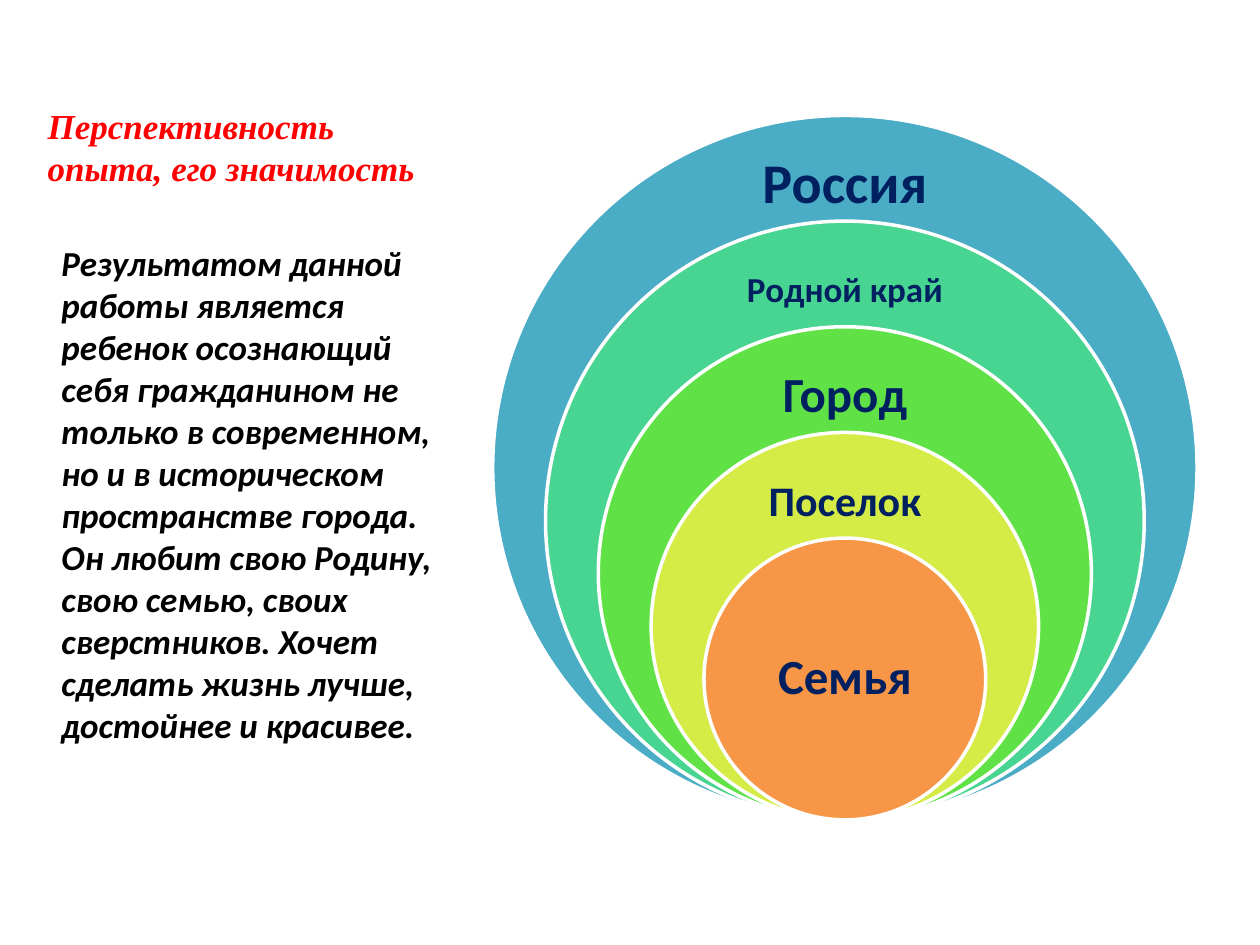
"""Build a slide with a statement beside five nested circles, from family to country."""

from dataclasses import dataclass

from pptx import Presentation
from pptx.dml.color import RGBColor
from pptx.enum.shapes import MSO_SHAPE
from pptx.enum.text import MSO_ANCHOR, PP_ALIGN
from pptx.slide import Slide
from pptx.text.text import TextFrame, _Paragraph
from pptx.util import Pt

COLORS = {
    "title": "FF0000",
    "body": "000000",
    "label": "002060",
    "outline": "FFFFFF",
    "country": "4BACC6",
    "region": "48D491",
    "city": "60E146",
    "settlement": "D5EC46",
    "family": "F79646",
}
TITLE = "Перспективность опыта, его значимость"
BODY = (
    "Результатом данной работы является ребенок осознающий себя гражданином "
    "не только в современном, но и в историческом пространстве города. "
    "Он любит свою Родину, свою семью, своих сверстников. "
    "Хочет сделать жизнь лучше, достойнее и красивее."
)
CENTER_X = 482.8
CIRCLES_BOTTOM = 468.5
OUTER_DIAMETER = 402.5
DIAMETER_STEP = 0.15 * OUTER_DIAMETER
LABEL_DROP = 0.05 * OUTER_DIAMETER


@dataclass(frozen=True)
class Circle:
    """One level of belonging, with its label."""

    text: str
    color: str
    size: float
    label_width: float
    label_height: float = 40


CIRCLES = [
    Circle("Россия", "country", 32, 151),
    Circle("Родной край", "region", 20, 148),
    Circle("Город", "city", 28, 146),
    Circle("Поселок", "settlement", 24, 120),
    Circle("Семья", "family", 28, 114, 80.5),
]


def rgb(name: str) -> RGBColor:
    """Return a named colour."""
    return RGBColor.from_string(COLORS[name])


def add_run(paragraph: _Paragraph, text: str, font: str, size: float,
            color: str, italic: bool = False) -> None:
    """Add a bold run to a paragraph."""
    run = paragraph.add_run()
    run.text = text
    run.font.name = font
    run.font.size = Pt(size)
    run.font.bold = True
    run.font.italic = italic
    run.font.color.rgb = rgb(color)


def set_margins(frame: TextFrame, side: float, top: float, bottom: float) -> None:
    """Wrap a text frame and set its margins."""
    frame.word_wrap = True
    frame.margin_left = frame.margin_right = Pt(side)
    frame.margin_top, frame.margin_bottom = Pt(top), Pt(bottom)


def add_title(slide: Slide) -> None:
    """Place and format the title placeholder."""
    title = slide.shapes.title
    title.left, title.top = Pt(20), Pt(43)
    title.width, title.height = Pt(237), Pt(91.5)
    frame = title.text_frame
    set_margins(frame, 7.2, 3.6, 27)
    frame.vertical_anchor = MSO_ANCHOR.BOTTOM
    paragraph = frame.paragraphs[0]
    paragraph.alignment = PP_ALIGN.LEFT
    add_run(paragraph, TITLE, "Times New Roman", 20, "title", italic=True)


def add_body(slide: Slide) -> None:
    """Add the statement below the title."""
    frame = slide.shapes.add_textbox(Pt(28), Pt(134.5), Pt(237), Pt(369.5)).text_frame
    set_margins(frame, 7.2, 3.6, 3.6)
    add_run(frame.paragraphs[0], BODY, "Calibri", 20, "body", italic=True)


def add_circle(slide: Slide, circle: Circle, level: int) -> None:
    """Add a circle resting on the common bottom, and its label."""
    diameter = OUTER_DIAMETER - level * DIAMETER_STEP
    top = CIRCLES_BOTTOM - diameter
    shape = slide.shapes.add_shape(
        MSO_SHAPE.OVAL, Pt(CENTER_X - diameter / 2), Pt(top), Pt(diameter), Pt(diameter)
    )
    shape.shadow.inherit = False
    shape.fill.solid()
    shape.fill.fore_color.rgb = rgb(circle.color)
    shape.line.color.rgb = rgb("outline")
    shape.line.width = Pt(2)

    innermost = level == len(CIRCLES) - 1
    drop = (diameter - circle.label_height) / 2 if innermost else LABEL_DROP
    label = slide.shapes.add_textbox(
        Pt(CENTER_X - circle.label_width / 2), Pt(top + drop),
        Pt(circle.label_width), Pt(circle.label_height),
    )
    frame = label.text_frame
    set_margins(frame, 7.2, 0, 0)
    frame.vertical_anchor = MSO_ANCHOR.MIDDLE
    paragraph = frame.paragraphs[0]
    paragraph.alignment = PP_ALIGN.CENTER
    paragraph.line_spacing = 0.9
    add_run(paragraph, circle.text, "Calibri", circle.size, "label")


def main() -> None:
    """Create and save the presentation."""
    presentation = Presentation()
    presentation.slide_width, presentation.slide_height = Pt(720), Pt(540)
    slide = presentation.slides.add_slide(presentation.slide_layouts[5])
    add_title(slide)
    add_body(slide)
    for level, circle in enumerate(CIRCLES):
        add_circle(slide, circle, level)
    presentation.save("out.pptx")


if __name__ == "__main__":
    main()
